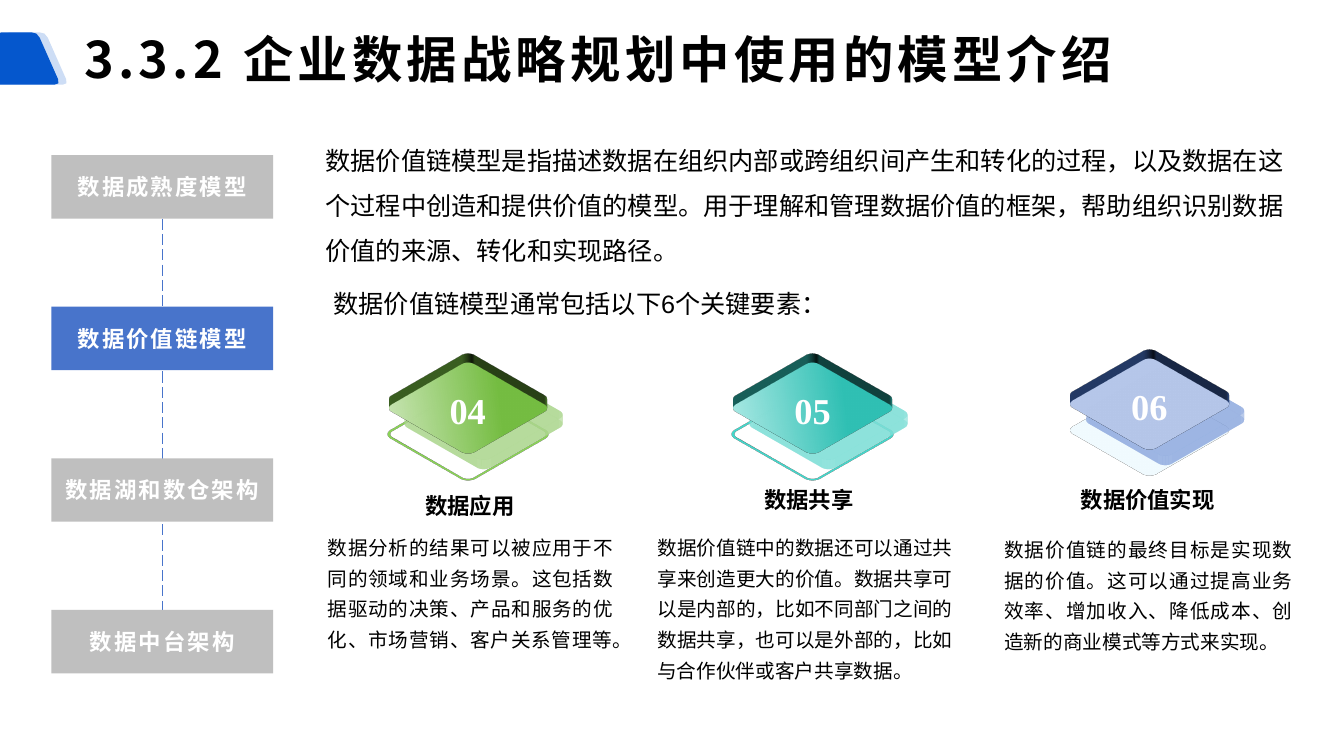
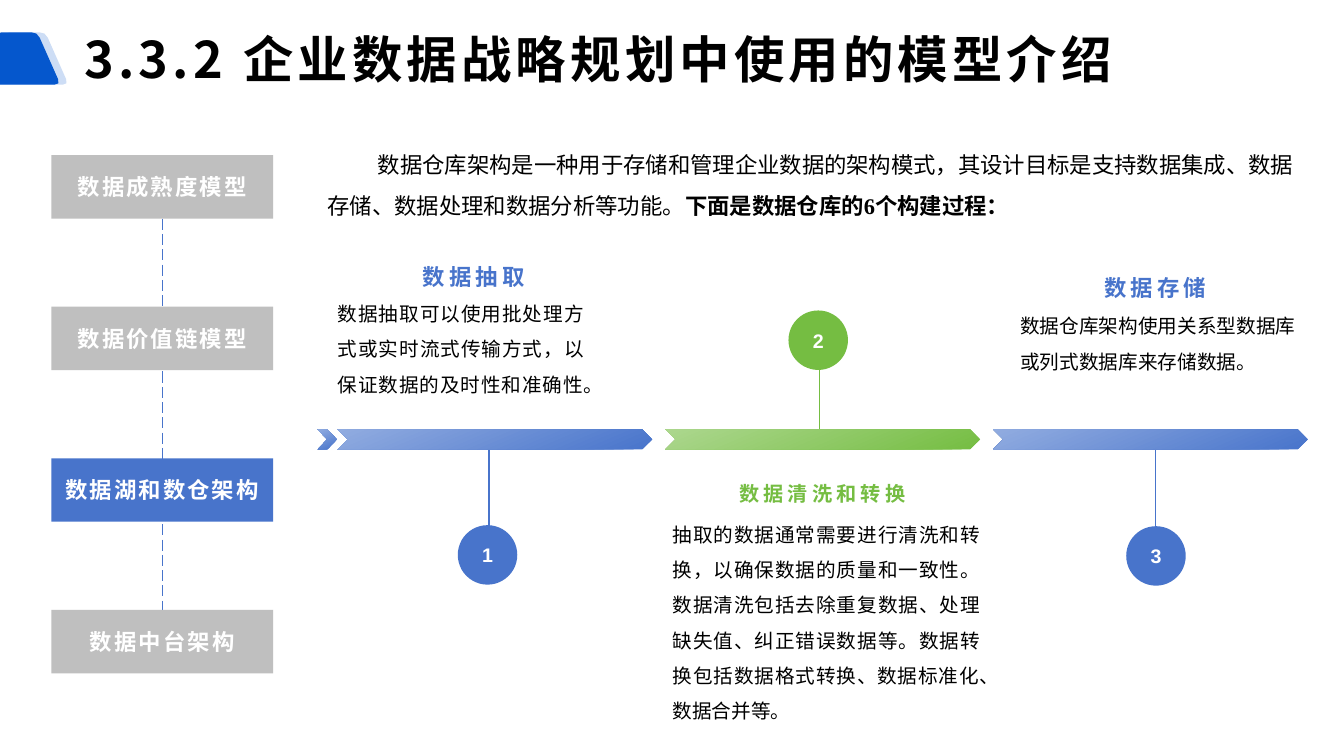
from math import hypot

from lxml import etree
from pptx import Presentation
from pptx.dml.color import RGBColor
from pptx.enum.dml import MSO_LINE
from pptx.enum.shapes import MSO_CONNECTOR, MSO_SHAPE
from pptx.enum.text import MSO_ANCHOR, PP_ALIGN
from pptx.oxml.ns import qn
from pptx.util import Inches, Pt

HEX = {
    "black": "000000", "white": "FFFFFF", "grey": "BFBFBF",
    "band": "0557CD", "haze": "CDDDF5",
    "blue": "4874CB", "sky": "91ACE0", "pale": "B6C7EA", "mist": "DAE3F5",
    "green": "75BD42", "leaf": "ACD78E", "mint": "C8E5B3",
    "teal": "30C0B4", "lagoon": "7DDFD7", "foam": "A9E9E4",
}
SANS, SANS_JP = "Noto Sans CJK SC", "Noto Sans CJK JP"
SERIF, ARIAL = "Times New Roman", "Arial"
LEFT, MID, JUST = PP_ALIGN.LEFT, PP_ALIGN.CENTER, PP_ALIGN.JUSTIFY

TITLE = "3.3.2 企业数据战略规划中使用的模型介绍"
MODELS = ["数据成熟度模型", "数据价值链模型", "数据湖和数仓架构", "数据中台架构"]

# left, top, number, colours (light, full, side, edge, shade, under)
# then heading (x, y, width, text) and body (x, y, width, height, inset, text)
TILES = [
    (4.06, 3.47, "04", ("mint", "green", "green", "green", "leaf", None),
     (4.12, 4.83, 1.1, "数据应用"),
     (3.17, 5.25, 2.99, 1.25, 0.08,
      "数据分析的结果可以被应用于不同的领域和业务场景。这包括数据驱动的决策、"
      "产品和服务的优化、市场营销、客户关系管理等。")),
    (7.48, 3.47, "05", ("foam", "teal", "teal", "teal", "lagoon", None),
     (7.48, 4.77, 1.1, "数据共享"),
     (6.52, 5.25, 2.93, 1.77, 0,
      "数据价值链中的数据还可以通过共享来创造更大的价值。数据共享可以是内部的，"
      "比如不同部门之间的数据共享，也可以是外部的，比如与合作伙伴或客户共享数据。")),
    (10.82, 3.43, "06", ("pale", "pale", "blue", "sky", "sky", "mist"),
     (10.62, 4.77, 1.61, "数据价值实现"),
     (9.88, 5.27, 3.02, 1.89, 0.08,
      "数据价值链的最终目标是实现数据的价值。这可以通过提高业务效率、增加收入、"
      "降低成本、创造新的商业模式等方式来实现。")),
]

# number, colours (full, light), line x, line ends, disc (x, y),
# then heading (x, y, w, h, size, text) and body (x, y, w, h, font, text)
STEPS = [
    ("1", ("blue", "sky"), 4.85, (5.44, 4.37), (4.54, 5.21),
     (3.92, 2.52, 1.56, 0.36, 16, "数据抽取"),
     (3.35, 2.88, 2.44, 1.23, SANS_JP,
      "数据抽取可以使用批处理方式或实时流式传输方式，以保证数据的及时性和准确性。")),
    ("2", ("green", "leaf"), 8.13, (4.32, 3.28), (7.82, 3.08),
     (7.25, 4.6, 1.81, 0.42, 14.4, "数据清洗和转换"),
     (6.67, 5.07, 3.05, 2.2, SANS_JP,
      "抽取的数据通常需要进行清洗和转换，以确保数据的质量和一致性。数据清洗包括去除重复数据、"
      "处理缺失值、纠正错误数据等。数据转换包括数据格式转换、数据标准化、数据合并等。")),
    ("3", ("blue", "sky"), 11.46, (5.44, 4.37), (11.17, 5.22),
     (10.68, 2.61, 1.56, 0.38, 16, "数据存储"),
     (10.12, 3, 2.73, 1.05, SANS,
      "数据仓库架构使用关系型数据库或列式数据库来存储数据。")),
]


def rgb(name):
    return RGBColor.from_string(HEX[name])


def node(parent, tag, **attrs):
    part = etree.SubElement(parent, qn(tag))
    for key, value in attrs.items():
        part.set(key, str(value))
    return part


def write(shape, runs, size, font, color="black", bold=False, align=LEFT,
          ls=None, spc=0, pad=(0.1, 0.05), anchor=MSO_ANCHOR.TOP, indent=0):
    """Fill a shape with one paragraph; runs is a text or (text, bold) pairs."""
    frame = shape.text_frame
    frame.word_wrap = True
    frame.vertical_anchor = anchor
    frame.margin_left = frame.margin_right = Inches(pad[0])
    frame.margin_top = frame.margin_bottom = Inches(pad[1])
    para = frame.paragraphs[0]
    para.alignment = align
    if ls:
        para.line_spacing = ls
    if indent:
        para._p.get_or_add_pPr().set("indent", str(Inches(indent)))
    face = para.font
    face.size, face.name = Pt(size), font
    face.color.rgb = rgb(color)
    if spc:
        face._rPr.set("spc", str(int(spc * 100)))
    node(face._rPr, "a:ea", typeface=font if font.startswith("Noto") else SANS)
    if isinstance(runs, str):
        face.bold = bold
        para.add_run().text = runs
    else:
        for text, heavy in runs:
            run = para.add_run()
            run.text, run.font.bold = text, heavy


def label(slide, box, runs, size, font, **style):
    write(slide.shapes.add_textbox(*map(Inches, box)), runs, size, font, **style)


def paint(shape, color=None, edge=None, blend=None, angle=0, reach=1):
    """Give a solid or two-colour fill, or none, and an optional outline."""
    shape.shadow.inherit = False
    if blend:
        shape.fill.gradient()
        shape.fill.gradient_angle = angle
        for stop, name, spot in zip(shape.fill.gradient_stops, blend, (0, reach)):
            stop.color.rgb = rgb(name)
            stop.position = spot
    elif color:
        shape.fill.solid()
        shape.fill.fore_color.rgb = rgb(color)
    else:
        shape.fill.background()
    if edge:
        shape.line.color.rgb = rgb(edge)
        shape.line.width = Pt(2)
    else:
        shape.line.fill.background()


def block(slide, kind, box, **look):
    shape = slide.shapes.add_shape(kind, *map(Inches, box))
    paint(shape, **look)
    return shape


def outline(slide, points, **look):
    spots = [(Inches(x), Inches(y)) for x, y in points]
    pen = slide.shapes.build_freeform(*spots[0], scale=1.0)
    pen.add_line_segments(spots[1:], close=True)
    paint(pen.convert_to_shape(), **look)


def soften(points, cut):
    """Round each corner of a polygon, starting cut inches before it."""
    result = []
    for i, (x, y) in enumerate(points):
        ends = []
        for px, py in (points[i - 1], points[(i + 1) % len(points)]):
            part = cut / hypot(px - x, py - y)
            ends.append((x + part * (px - x), y + part * (py - y)))
        (ax, ay), (bx, by) = ends
        result += [ends[0], ((ax + 2 * x + bx) / 4, (ay + 2 * y + by) / 4), ends[1]]
    return result


def wire(slide, start, end, color):
    line = slide.shapes.add_connector(
        MSO_CONNECTOR.STRAIGHT, *map(Inches, start + end))
    line.line.color.rgb = rgb(color)
    line.line.width = Pt(1)
    node(line._element.spPr, "a:effectLst")
    return line


def header(slide):
    for shift, color in ((0.08, "haze"), (0, "band")):
        corners = [(-0.04, 0.32), (0.37, 0.32), (0.6, 0.84), (-0.27, 0.84)]
        outline(slide, soften([(x + shift, y) for x, y in corners], 0.06),
                color=color)
    label(slide, (0.74, 0.08, 12.59, 1), TITLE, 36, SANS, bold=True, spc=3,
          anchor=MSO_ANCHOR.MIDDLE)


def menu(slide, chosen, left=0.51, top=1.54, wide=2.2, high=0.63, last=6.05):
    x = left + wide / 2
    link = wire(slide, (x, top + high), (x, last), "blue")
    link.line.dash_style = MSO_LINE.LONG_DASH
    step = (last - top) / (len(MODELS) - 1)
    items = []
    for i, name in enumerate(MODELS):
        item = block(slide, MSO_SHAPE.RECTANGLE, (left, top + i * step, wide, high),
                     color="blue" if i == chosen else "grey")
        write(item, name, 16, SERIF, color="white", bold=True, align=MID,
              spc=1.5, anchor=MSO_ANCHOR.MIDDLE)
        items.append(item)
    link.begin_connect(items[0], 2)
    link.end_connect(items[-1], 0)


def slab(slide, left, top, side=None, shade=None, size=1.16, **look):
    """Draw a rounded square seen from above, thick if side is a colour."""
    shape = block(slide, MSO_SHAPE.ROUNDED_RECTANGLE, (left, top, size, size), **look)
    shape.adjustments[0] = 0.08
    shape.rotation = 180
    props = shape._element.spPr
    if shade:
        cast = node(props.find(qn("a:effectLst")), "a:outerShdw", blurRad=Pt(15),
                    dist=Pt(16), dir=45 * 60000, algn="ctr", rotWithShape=0)
        node(node(cast, "a:srgbClr", val=HEX[shade]), "a:alpha", val=40000)
    scene = node(props, "a:scene3d")
    node(scene, "a:camera", prst="isometricTopUp")
    node(scene, "a:lightRig", rig="threePt", dir="t")
    if side:
        solid = node(props, "a:sp3d", extrusionH=Pt(8))
        node(node(solid, "a:extrusionClr"), "a:srgbClr", val=HEX[side])


def card(slide, x, y, number, colors, head, body):
    light, full, side, edge, shade, under = colors
    slab(slide, x, y + 0.26, color=under, edge=edge)
    slab(slide, x, y, side=side, shade=shade, edge="white",
         blend=(light, full), angle=320, reach=0.7)
    label(slide, (x + 0.25, y + 0.35, 0.66, 0.49), number, 26, SERIF,
          color="white", bold=True, align=MID, pad=(0, 0),
          anchor=MSO_ANCHOR.MIDDLE)
    *spot, name = head
    label(slide, (*spot, 0.33), name, 16, ARIAL, bold=True)
    *area, inset, text = body
    label(slide, area, text, 14, SANS_JP, align=JUST, ls=1.3, pad=(inset, 0))


def bar(slide, box, colors):
    shape = block(slide, MSO_SHAPE.CHEVRON, box, blend=colors, angle=247)
    shape._element.spPr.find(qn("a:xfrm")).set("flipV", "1")


def stage(slide, box, number, colors, x, ends, disc, head, body, size=0.59):
    """Draw one arrow bar in its box, with a numbered pin and its texts."""
    full = colors[0]
    wire(slide, (x, ends[0]), (x, ends[1]), full)
    bar(slide, box, colors)
    dot = block(slide, MSO_SHAPE.OVAL, (*disc, size, size), color=full)
    write(dot, number, 14, ARIAL, color="white", bold=True, align=MID,
          anchor=MSO_ANCHOR.MIDDLE)
    *area, points, name = head
    label(slide, area, name, points, SANS, color=full, bold=True, align=MID,
          spc=3, pad=(0, 0), anchor=MSO_ANCHOR.BOTTOM)
    *area, font, text = body
    label(slide, area, text, 14, font, align=JUST, ls=1.5, pad=(0, 0))


def chain(slide):
    label(slide, (3.13, 1.24, 9.8, 1.8),
          "数据价值链模型是指描述数据在组织内部或跨组织间产生和转化的过程，以及数据在这个过程中"
          "创造和提供价值的模型。用于理解和管理数据价值的框架，帮助组织识别数据价值的来源、"
          "转化和实现路径。", 18, SANS, ls=1.5)
    label(slide, (3.21, 2.81, 7.48, 0.4),
          "数据价值链模型通常包括以下6个关键要素：", 18, ARIAL)
    for part in TILES:
        card(slide, *part)


def store(slide, left=3.35, top=4.26, wide=3.12, high=0.2, step=3.25):
    label(slide, (3.15, 1.32, 9.82, 0.96), [
        ("数据仓库架构是一种用于存储和管理企业数据的架构模式，其设计目标是支持数据集成、"
         "数据存储、数据处理和数据分析等功能。", False),
        ("下面是数据仓库的6个构建过程：", True)], 16, SERIF, ls=1.5, indent=0.5)
    bar(slide, (left - 0.2, top, 0.19, high), ("blue", "sky"))
    for i, part in enumerate(STEPS):
        stage(slide, (left + i * step, top, wide, high), *part)


def main():
    deck = Presentation()
    deck.slide_width, deck.slide_height = Inches(13.33), Inches(7.5)
    for chosen, content in ((1, chain), (2, store)):
        slide = deck.slides.add_slide(deck.slide_layouts[6])
        header(slide)
        menu(slide, chosen)
        content(slide)
    deck.save("out.pptx")


if __name__ == "__main__":
    main()
